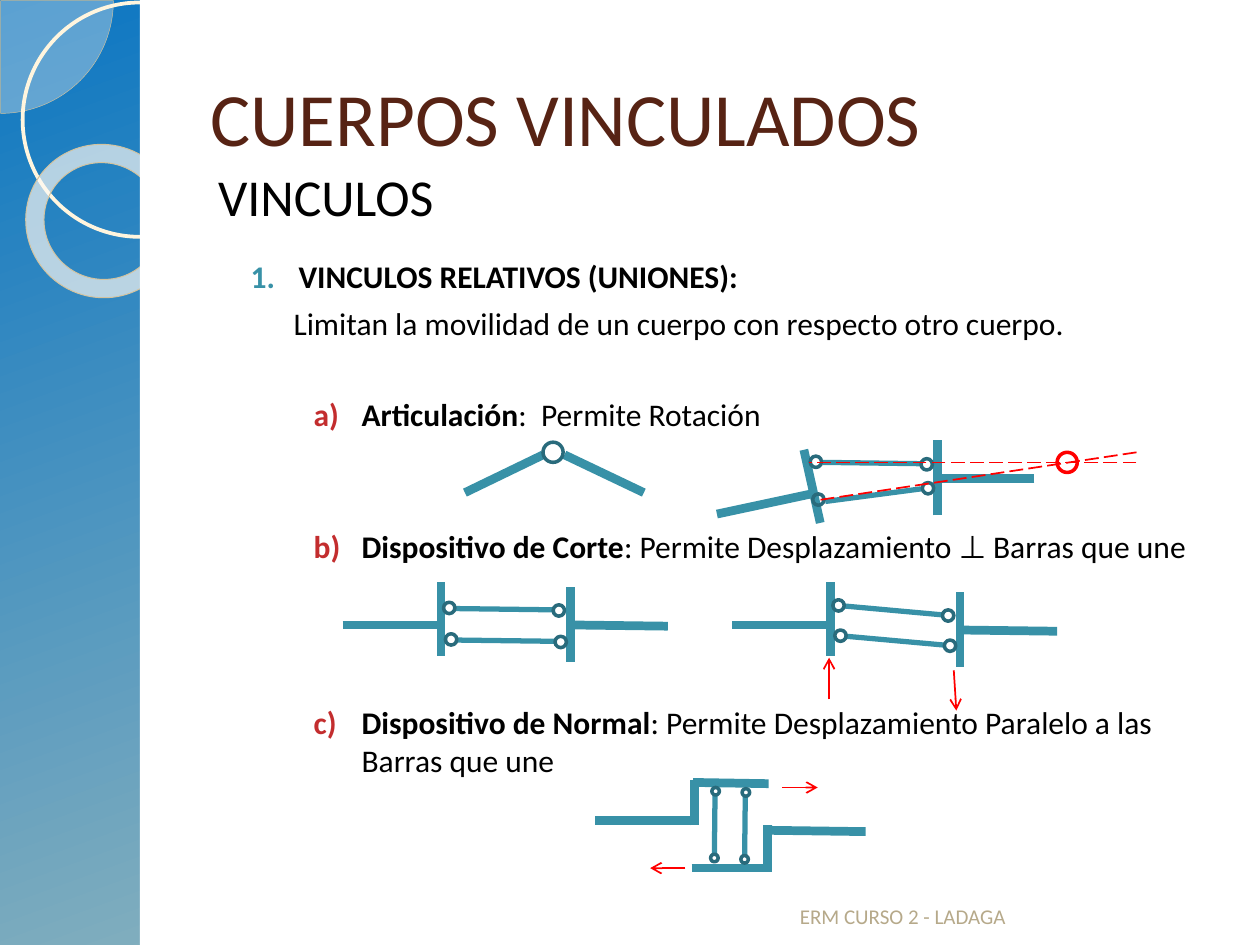
"""Build the slide on relative links between bodies, with its linkage sketches."""
from lxml.etree import SubElement
from pptx import Presentation
from pptx.dml.color import RGBColor
from pptx.enum.dml import MSO_LINE
from pptx.enum.shapes import MSO_CONNECTOR as CONNECTOR, MSO_SHAPE as SHAPE
from pptx.enum.text import MSO_ANCHOR as ANCHOR, MSO_AUTO_SIZE as AUTO_SIZE, PP_ALIGN as ALIGN
from pptx.oxml.ns import qn
from pptx.util import Inches, Pt

BLACK = RGBColor(0x00, 0x00, 0x00)
WHITE = RGBColor(0xFF, 0xFF, 0xFF)
BROWN = RGBColor(0x57, 0x23, 0x14)
SAND = RGBColor(0xB6, 0xA9, 0x8A)
TAN = RGBColor(0xD3, 0xC3, 0x9F)
CREAM = RGBColor(0xFF, 0xF5, 0xDE)
PALE = RGBColor(0xFE, 0xFA, 0xF4)
SKY = RGBColor(0x0C, 0x76, 0xC2)
MIST = RGBColor(0xB0, 0xC4, 0xBC)
TEAL = RGBColor(0x38, 0x91, 0xA7)
DARK_TEAL = RGBColor(0x29, 0x6B, 0x7C)
CRIMSON = RGBColor(0xC3, 0x2D, 0x2E)
RED = RGBColor(0xFF, 0x00, 0x00)

presentation = Presentation()
presentation.slide_width = Inches(10)
presentation.slide_height = Inches(7.5)
COLUMN = presentation.slide_width / 100
ROW = presentation.slide_height / 75
slide = presentation.slides.add_slide(presentation.slide_layouts[3])
shapes = slide.shapes
title, subtitle, outline_list = slide.placeholders


def write(paragraph, text, size=18, color=BLACK, bold=False):
    run = paragraph.add_run()
    run.text = text
    run.font.name = "Calibri"
    run.font.size = Pt(size)
    run.font.bold = bold
    run.font.color.rgb = color


def draw_line(ends, color, width, arrow=False, dashed=False):
    x1, y1, x2, y2 = ends
    connector = shapes.add_connector(CONNECTOR.STRAIGHT, int(x1 * COLUMN), int(y1 * ROW),
                                     int(x2 * COLUMN), int(y2 * ROW))
    connector.line.color.rgb = color
    connector.line.width = Pt(width)
    if dashed:
        connector.line.dash_style = MSO_LINE.LONG_DASH
    if arrow:
        SubElement(connector.line._get_or_add_ln(), qn("a:tailEnd"), type="arrow")
    SubElement(connector._element.spPr, qn("a:effectLst"))


background = slide.background.fill
background.gradient()
background.gradient_angle = 290
for stop, color in zip(background.gradient_stops, (SKY, MIST)):
    stop.color.rgb = color

decorations = [
    (SHAPE.PIE, (-8.9, -8.9, 17.9, 17.9), (0, 54.02), 0, PALE, 33, TAN, 0.25),
    (SHAPE.OVAL, (1.8, 0.2, 18.6, 18.6), (), 0, None, 100, CREAM, 2.15),
    (SHAPE.DONUT, (2, 11.5, 12.3, 12.1), (0.12,), 38.6, PALE, 67, TAN, 0.58),
    (SHAPE.RECTANGLE, (11.1, 0, 88.9, 75), (), 0, WHITE, 100, None, 0),
]
for kind, (left, top, width, height), adjustments, turn, fill, opacity, outline, weight in decorations:
    shape = shapes.add_shape(kind, int(left * COLUMN), int(top * ROW),
                             int(width * COLUMN), int(height * ROW))
    title._element.addprevious(shape._element)
    shape.shadow.inherit = False
    shape.rotation = turn
    for index, value in enumerate(adjustments):
        shape.adjustments[index] = value
    if fill is None:
        shape.fill.background()
    else:
        shape.fill.solid()
        shape.fill.fore_color.rgb = fill
        SubElement(shape.fill._xPr.find(".//" + qn("a:srgbClr")), qn("a:alpha"), val=str(opacity * 1000))
    if outline is None:
        shape.line.fill.background()
    else:
        shape.line.color.rgb = outline
        shape.line.width = Pt(weight)

footer = shapes.add_textbox(0, 0, COLUMN, ROW)
text_areas = [
    (title, (15.7, 3, 82, 12.5), ANCHOR.MIDDLE),
    (subtitle, (15.4, 13.1, 82, 5.5), ANCHOR.TOP),
    (outline_list, (14.6, 19.9, 84.3, 52.2), ANCHOR.TOP),
    (footer, (62.5, 69, 31.7, 5.2), ANCHOR.BOTTOM),
]
for shape, (left, top, width, height), anchor in text_areas:
    shape.left, shape.top = int(left * COLUMN), int(top * ROW)
    shape.width, shape.height = int(width * COLUMN), int(height * ROW)
    shape.text_frame.word_wrap = True
    shape.text_frame.auto_size = AUTO_SIZE.NONE
    shape.text_frame.vertical_anchor = anchor

heading = title.text_frame.paragraphs[0]
heading.alignment = ALIGN.LEFT
write(heading, "CUERPOS VINCULADOS", size=43, color=BROWN)

subheading = subtitle.text_frame.paragraphs[0]
subheading.line_spacing = 0.9
subheading.space_before = Pt(0)
properties = subheading._p.get_or_add_pPr()
properties.set("marL", str(Inches(0.09)))
properties.set("indent", "0")
SubElement(properties, qn("a:buNone"))
write(subheading, "VINCULOS", size=29.6)

items = [
    ("VINCULOS RELATIVOS (UNIONES):", "", 0.81, 0, "arabicPeriod", 1, TEAL),
    ("", "Limitan la movilidad de un cuerpo con respecto otro cuerpo.", 0.77, 5, None, 1, None),
    ("Articulación", ":  Permite Rotación", 1.31, 30.7, "alphaLcParenR", 1, CRIMSON),
    ("Dispositivo de Corte", ": Permite Desplazamiento ⊥ Barras que une", 1.31, 53.5,
     "alphaLcParenR", 2, CRIMSON),
    ("Dispositivo de Normal", ": Permite Desplazamiento Paralelo a las Barras que une", 1.31, 79.3,
     "alphaLcParenR", 3, CRIMSON),
]
frame = outline_list.text_frame
for index, (term, meaning, margin, gap, numbering, start, color) in enumerate(items):
    paragraph = frame.add_paragraph() if index else frame.paragraphs[0]
    paragraph.space_before = Pt(gap)
    properties = paragraph._p.get_or_add_pPr()
    properties.set("marL", str(Inches(margin)))
    properties.set("indent", str(Inches(-0.38) if numbering else 0))
    if numbering:
        bullet_color = SubElement(properties, qn("a:buClr"))
        SubElement(bullet_color, qn("a:srgbClr"), val=str(color))
        SubElement(properties, qn("a:buFont"), typeface="+mj-lt")
        SubElement(properties, qn("a:buAutoNum"), type=numbering, startAt=str(start))
    else:
        SubElement(properties, qn("a:buNone"))
    if term:
        write(paragraph, term, bold=True)
    if meaning:
        write(paragraph, meaning)

write(footer.text_frame.paragraphs[0], "ERM CURSO 2 - LADAGA", size=12, color=SAND)

bars = [
    (36.9, 39.1, 43.1, 36.1), (51.1, 39.1, 44.8, 36.1),
    (65.1, 41.5, 63.8, 35.7), (64.4, 39.2, 56.9, 40.8),
    (74.4, 40.9, 74.4, 34.9), (82.1, 38, 74.4, 38),
    (54.9, 65.1, 47.2, 65.1), (55.1, 65.5, 55.1, 61.9), (61, 62.2, 55, 62.1),
    (61, 65.9, 68.7, 66), (60.9, 65.5, 60.9, 69.2), (54.9, 68.9, 61, 68.9),
]
rods = [(73, 36.8, 65.3, 36.7), (73.1, 38.8, 65.5, 39.8)]
joints = [
    (43.1, 35.1, 1.6, DARK_TEAL), (83.9, 35.9, 1.6, RED),
    (64.3, 36.2, 0.9, DARK_TEAL), (73.1, 36.4, 0.9, DARK_TEAL),
    (64.5, 39.2, 0.9, DARK_TEAL), (73.2, 38.3, 0.9, DARK_TEAL),
]

for left, plate_drop, link_drop, link_tops in [(27.2, 0.4, 0.2, (47.8, 50.3)),
                                               (58.1, 0.8, 0.8, (47.6, 50))]:
    near, far = left + 7.8, left + 18.1
    bars += [(left, 49.6, near, 49.6), (near, 46.2, near, 52.1),
             (far, 46.2 + plate_drop, far, 52.1 + plate_drop),
             (far, 49.2 + plate_drop, far + 7.7, 49.3 + plate_drop)]
    for link, top in enumerate(link_tops):
        x = left + 8 + link * 0.15
        joints += [(x, top, 0.9, DARK_TEAL), (x + 8.7, top + link_drop, 0.9, DARK_TEAL)]
        rods.append((x + 0.95, top + 0.5, x + 8.7, top + link_drop + 0.4))

for x, top in [(56.5, 62.5), (58.9, 62.6)]:
    joints += [(x, top, 0.6, DARK_TEAL), (x - 0.1, top + 5.3, 0.6, DARK_TEAL)]
    rods.append((x + 0.25, top + 0.6, x + 0.2, top + 5.3))

for bar in bars:
    draw_line(bar, TEAL, 5)
for rod in rods:
    draw_line(rod, TEAL, 3)
for left, top, size, color in joints:
    joint = shapes.add_shape(SHAPE.OVAL, int(left * COLUMN), int(top * ROW),
                             int(size * COLUMN), int(size * ROW))
    joint.shadow.inherit = False
    joint.fill.background()
    joint.line.color.rgb = color
    joint.line.width = Pt(2)
for axis in [(90.2, 36.7, 64.2, 36.7), (90.2, 35.9, 64.9, 39.7)]:
    draw_line(axis, RED, 1, dashed=True)
for motion in [(65.8, 55.5, 65.8, 52.2), (75.7, 53.2, 75.9, 56.4),
               (62.1, 62.5, 64.9, 62.5), (54.4, 68.9, 51.6, 68.9)]:
    draw_line(motion, RED, 1, arrow=True)

presentation.save("out.pptx")
